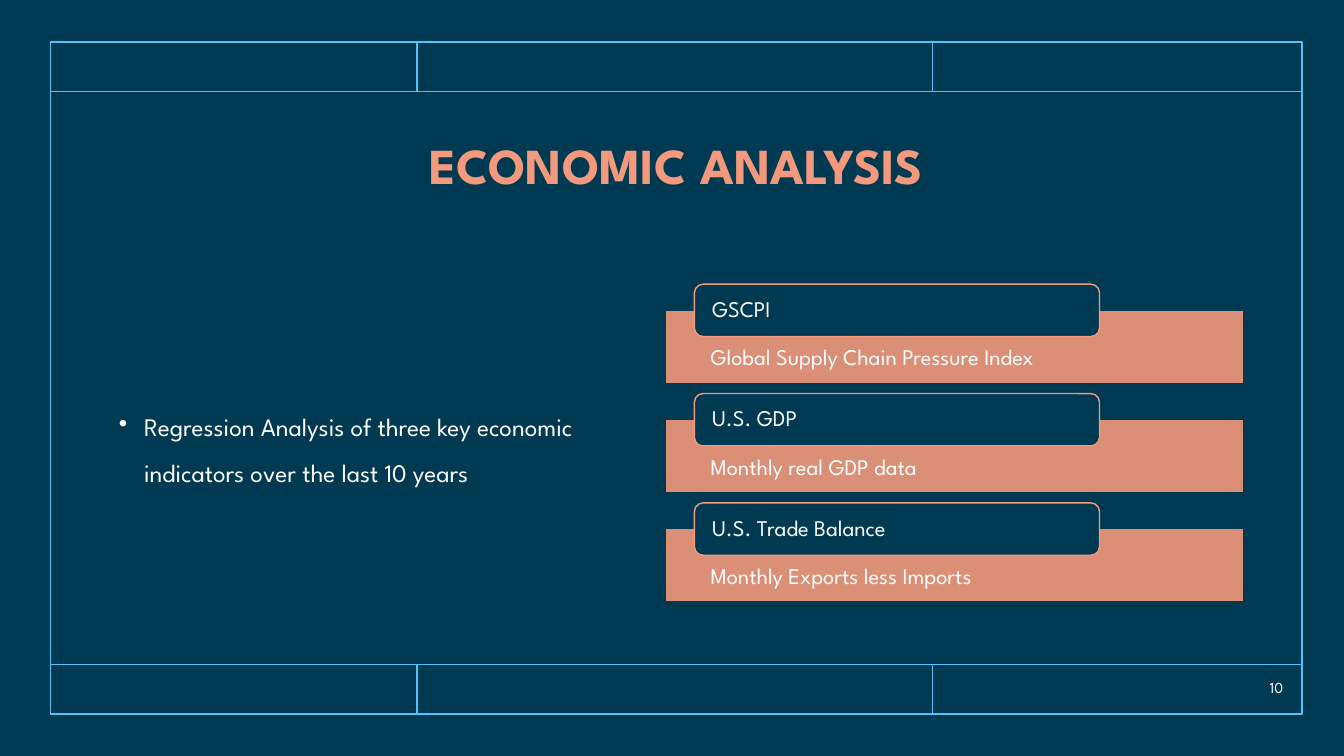
from pptx import Presentation
from pptx.dml.color import RGBColor
from pptx.enum import shapes, text
from pptx.oxml import ns
from pptx.util import Pt
from lxml import etree

NAVY, SKY, CORAL, WHITE = "003A52", "51C3F9", "F4997C", "FFFFFF"


def rgb(value):
    return RGBColor.from_string(value)


def write(frame, words, size, color=WHITE, spacing=1.0, bold=False,
          align=text.PP_ALIGN.LEFT, anchor=text.MSO_ANCHOR.MIDDLE):
    frame.word_wrap = True
    frame.auto_size = text.MSO_AUTO_SIZE.NONE
    frame.vertical_anchor = anchor
    paragraph = frame.paragraphs[0]
    paragraph.alignment = align
    paragraph.line_spacing = spacing
    run = paragraph.add_run()
    run.text = words
    run.font.name = "League Spartan"
    run.font.size = Pt(size)
    run.font.bold = bold
    run.font.color.rgb = rgb(color)
    return paragraph


deck = Presentation()
deck.slide_width, deck.slide_height = Pt(960), Pt(540)
slide = deck.slides.add_slide(deck.slide_layouts[5])
slide.background.fill.solid()
slide.background.fill.fore_color.rgb = rgb(NAVY)

# Border frame
left, top, right, bottom = 36, 30, 930, 510
upper, lower = 65.5, 474.5
border = slide.shapes.add_shape(
    shapes.MSO_SHAPE.RECTANGLE, Pt(left), Pt(top), Pt(right - left), Pt(bottom - top))
border.shadow.inherit = False
border.fill.background()
border.line.color.rgb = rgb(SKY)
border.line.width = Pt(1)

# Header and footer rules with their dividers
rules = [(left, y, right, y) for y in (upper, lower)]
for x in (298, 666):
    rules += [(x, top, x, upper), (x, lower, x, bottom)]
for ends in rules:
    rule = slide.shapes.add_connector(
        shapes.MSO_CONNECTOR.STRAIGHT, *[Pt(value) for value in ends])
    rule.line.color.rgb = rgb(SKY)
    rule.line.width = Pt(1)
    etree.SubElement(rule.element.spPr, ns.qn("a:effectLst"))

# Title
title = slide.shapes.title
title.left, title.top, title.width, title.height = Pt(left), Pt(upper), Pt(right - left), Pt(109.5)
write(title.text_frame, "ECONOMIC ANALYSIS", 36, CORAL, 0.9, True, text.PP_ALIGN.CENTER)

# Bulleted summary
summary = slide.shapes.add_textbox(Pt(77.8), Pt(181.5), Pt(365.8), Pt(268.5))
point = write(summary.text_frame,
              "Regression Analysis of three key economic indicators over the last 10 years",
              18, spacing=1.5)
point.space_before = Pt(18)
bullet = point._p.get_or_add_pPr()
bullet.set("marL", str(Pt(18)))
bullet.set("indent", str(Pt(-18)))
bullet_color = etree.SubElement(bullet, ns.qn("a:buClr"))
etree.SubElement(bullet_color, ns.qn("a:srgbClr"), val=WHITE)
etree.SubElement(bullet, ns.qn("a:buChar"), char="•")

# Indicator cards: a description band with a name tab on its top edge
indicators = [
    ("GSCPI", "Global Supply Chain Pressure Index"),
    ("U.S. GDP", "Monthly real GDP data"),
    ("U.S. Trade Balance", "Monthly Exports less Imports"),
]
for row, (name, description) in enumerate(indicators):
    card_top = 203 + row * 78.1

    band = slide.shapes.add_shape(
        shapes.MSO_SHAPE.RECTANGLE, Pt(475.2), Pt(card_top + 18.5), Pt(413.3), Pt(52.4))
    tab = slide.shapes.add_shape(
        shapes.MSO_SHAPE.ROUNDED_RECTANGLE, Pt(496), Pt(card_top), Pt(289.4), Pt(37.4))
    for part, fill, outline in ((band, CORAL, NAVY), (tab, NAVY, CORAL)):
        part.shadow.inherit = False
        part.fill.solid()
        part.fill.fore_color.rgb = rgb(fill)
        part.line.color.rgb = rgb(outline)
        part.line.width = Pt(1)
    band_color = band.element.spPr.find(ns.qn("a:solidFill")).find(ns.qn("a:srgbClr"))
    etree.SubElement(band_color, ns.qn("a:alpha"), val="90000")

    band_text, tab_text = band.text_frame, tab.text_frame
    band_text.margin_left = band_text.margin_right = Pt(32.4)
    band_text.margin_top, band_text.margin_bottom = Pt(26), Pt(8.5)
    write(band_text, description, 16, spacing=0.9, anchor=text.MSO_ANCHOR.TOP)
    tab_text.margin_left = tab_text.margin_right = Pt(10.8)
    tab_text.margin_top = tab_text.margin_bottom = 0
    write(tab_text, name, 16, spacing=0.9)

# Page number
page = slide.shapes.add_textbox(Pt(857.5), Pt(480.2), Pt(66.2), Pt(21.6))
write(page.text_frame, "10", 11, align=text.PP_ALIGN.RIGHT)

deck.save("out.pptx")
